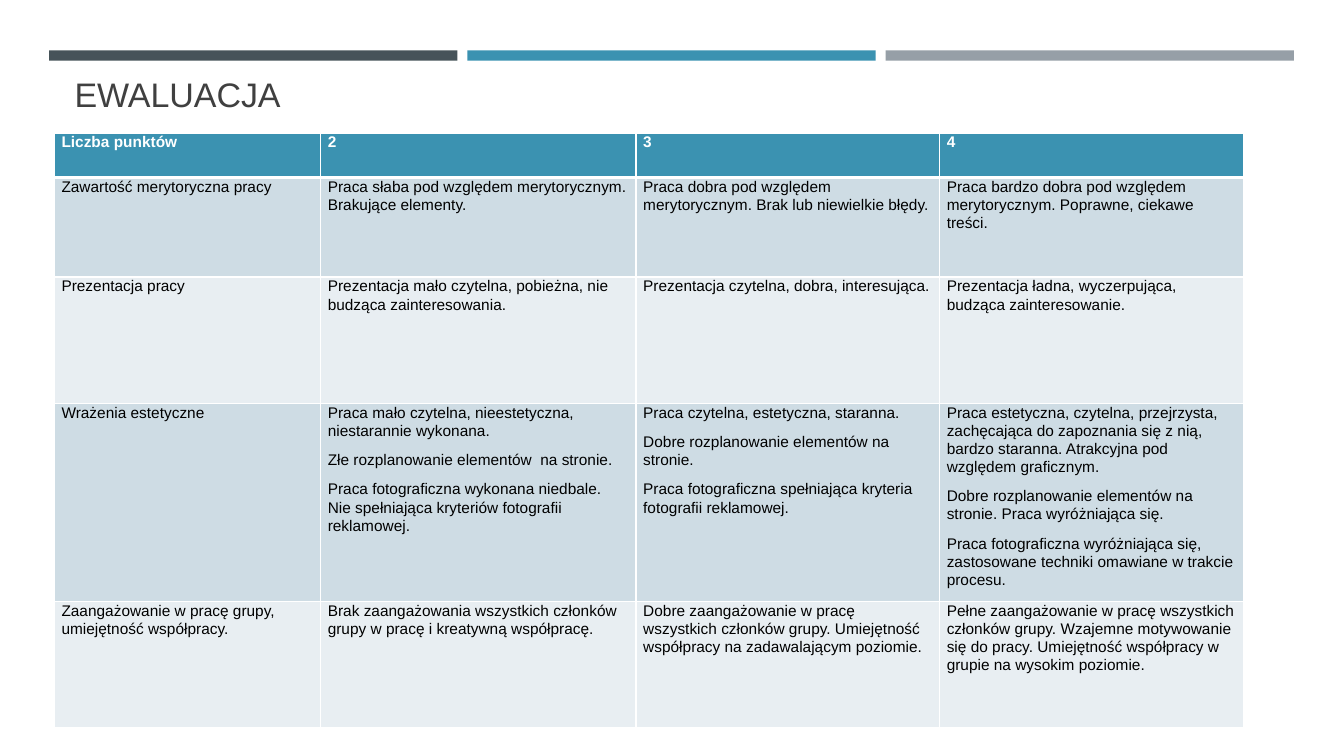
import pptx
import pptx.dml.color
import pptx.enum.shapes
import pptx.enum.text
import pptx.oxml.ns
import pptx.util
from lxml import etree

Cm = pptx.util.Cm
Pt = pptx.util.Pt

TITLE = "EWALUACJA"

# Each cell is a list of paragraphs.
CRITERIA = [
    [["Liczba punktów"], ["2"], ["3"], ["4"]],
    [
        ["Zawartość merytoryczna pracy"],
        ["Praca słaba pod względem merytorycznym. Brakujące elementy."],
        ["Praca dobra pod względem merytorycznym. Brak lub niewielkie błędy."],
        ["Praca bardzo dobra pod względem merytorycznym. Poprawne, ciekawe treści."],
    ],
    [
        ["Prezentacja pracy"],
        ["Prezentacja mało czytelna, pobieżna, nie budząca zainteresowania."],
        ["Prezentacja czytelna, dobra, interesująca."],
        ["Prezentacja ładna, wyczerpująca, budząca zainteresowanie."],
    ],
    [
        ["Wrażenia estetyczne"],
        [
            "Praca mało czytelna, nieestetyczna, niestarannie wykonana.",
            "Złe rozplanowanie elementów  na stronie.",
            "Praca fotograficzna wykonana niedbale. Nie spełniająca kryteriów "
            "fotografii reklamowej.",
        ],
        [
            "Praca czytelna, estetyczna, staranna.",
            "Dobre rozplanowanie elementów na stronie.",
            "Praca fotograficzna spełniająca kryteria fotografii reklamowej.",
        ],
        [
            "Praca estetyczna, czytelna, przejrzysta, zachęcająca do zapoznania się "
            "z nią, bardzo staranna. Atrakcyjna pod względem graficznym.",
            "Dobre rozplanowanie elementów na stronie. Praca wyróżniająca się.",
            "Praca fotograficzna wyróżniająca się, zastosowane techniki omawiane "
            "w trakcie procesu.",
        ],
    ],
    [
        ["Zaangażowanie w pracę grupy, umiejętność współpracy."],
        ["Brak zaangażowania wszystkich członków grupy w pracę i kreatywną współpracę."],
        ["Dobre zaangażowanie w pracę wszystkich członków grupy. Umiejętność "
         "współpracy na zadawalającym poziomie."],
        ["Pełne zaangażowanie w pracę wszystkich członków grupy. Wzajemne "
         "motywowanie się do pracy. Umiejętność współpracy w grupie na wysokim "
         "poziomie."],
    ],
]

THEME = {
    "font": "Arial",
    "title_size": 24.3,
    "cell_size": 11,
    "title": "404040",
    "header_text": "FFFFFF",
    "body_text": "000000",
    "header_fill": "3B92B1",
    "bands": ["CEDCE4", "E8EEF2"],
    "border": "FFFFFF",
    "bars": ["465359", "3B92B1", "969FA7"],
}

# Lengths in centimetres
BAR_LEFT, BAR_TOP, BAR_WIDTH, BAR_HEIGHT, BAR_PITCH = 1.24, 1.27, 10.29, 0.26, 10.54
TITLE_BOX = (1.63, 1.96, 30.63, 1.07)
TABLE_LEFT, TABLE_TOP = 1.37, 3.35
COLUMN_WIDTHS = [6.71, 7.95, 7.65, 7.65]
ROW_HEIGHTS = [1.12, 2.51, 3.18, 4.55, 3.18]
CELL_INSET = 0.18


def color(value):
    return pptx.dml.color.RGBColor.from_string(value)


def add_run(paragraph, text, size, text_color, bold=False):
    run = paragraph.add_run()
    run.text = text
    run.font.name = THEME["font"]
    run.font.size = Pt(size)
    run.font.bold = bold
    run.font.color.rgb = color(text_color)


def add_bars(slide):
    for index, bar_color in enumerate(THEME["bars"]):
        bar = slide.shapes.add_shape(
            pptx.enum.shapes.MSO_SHAPE.RECTANGLE,
            Cm(BAR_LEFT + index * BAR_PITCH), Cm(BAR_TOP), Cm(BAR_WIDTH), Cm(BAR_HEIGHT))
        bar.shadow.inherit = False
        bar.fill.solid()
        bar.fill.fore_color.rgb = color(bar_color)
        bar.line.fill.background()


def add_title(slide):
    frame = slide.shapes.add_textbox(*map(Cm, TITLE_BOX)).text_frame
    frame.word_wrap = True
    frame.vertical_anchor = pptx.enum.text.MSO_ANCHOR.BOTTOM
    paragraph = frame.paragraphs[0]
    paragraph.line_spacing = 0.9
    add_run(paragraph, TITLE, THEME["title_size"], THEME["title"])


def set_borders(cell, widths):
    """Draw the cell's borders; widths maps the side letters L, R, T, B to points."""
    qn = pptx.oxml.ns.qn
    properties = cell._tc.get_or_add_tcPr()
    for side, width in widths.items():
        line = etree.SubElement(properties, qn(f"a:ln{side}"), w=str(Pt(width)))
        fill = etree.SubElement(line, qn("a:solidFill"))
        etree.SubElement(fill, qn("a:srgbClr"), val=THEME["border"])


def fill_cell(cell, paragraphs, row_index):
    is_header = row_index == 0
    set_borders(cell, {"L": 1, "R": 1,
                       "T": 3 if row_index == 1 else 1,
                       "B": 3 if is_header else 1})
    cell.fill.solid()
    cell.fill.fore_color.rgb = color(
        THEME["header_fill"] if is_header else THEME["bands"][(row_index - 1) % 2])
    cell.margin_left = cell.margin_right = Cm(CELL_INSET)
    cell.margin_top = cell.margin_bottom = 0
    frame = cell.text_frame
    for index, text in enumerate(paragraphs):
        paragraph = frame.add_paragraph() if index else frame.paragraphs[0]
        paragraph.line_spacing = 1.06
        paragraph.space_after = Pt(8)
        add_run(paragraph, text, THEME["cell_size"],
                THEME["header_text" if is_header else "body_text"], is_header)


def add_criteria_table(slide):
    table = slide.shapes.add_table(
        len(CRITERIA), len(COLUMN_WIDTHS), Cm(TABLE_LEFT), Cm(TABLE_TOP),
        Cm(sum(COLUMN_WIDTHS)), Cm(sum(ROW_HEIGHTS))).table
    table.horz_banding = False
    for column, width in zip(table.columns, COLUMN_WIDTHS):
        column.width = Cm(width)
    for row_index, (row, height) in enumerate(zip(table.rows, ROW_HEIGHTS)):
        row.height = Cm(height)
        for cell, paragraphs in zip(row.cells, CRITERIA[row_index]):
            fill_cell(cell, paragraphs, row_index)


def main():
    presentation = pptx.Presentation()
    presentation.slide_width = Cm(33.87)
    presentation.slide_height = Cm(19.05)
    slide = presentation.slides.add_slide(presentation.slide_layouts[6])
    add_bars(slide)
    add_title(slide)
    add_criteria_table(slide)
    presentation.save("out.pptx")


if __name__ == "__main__":
    main()
